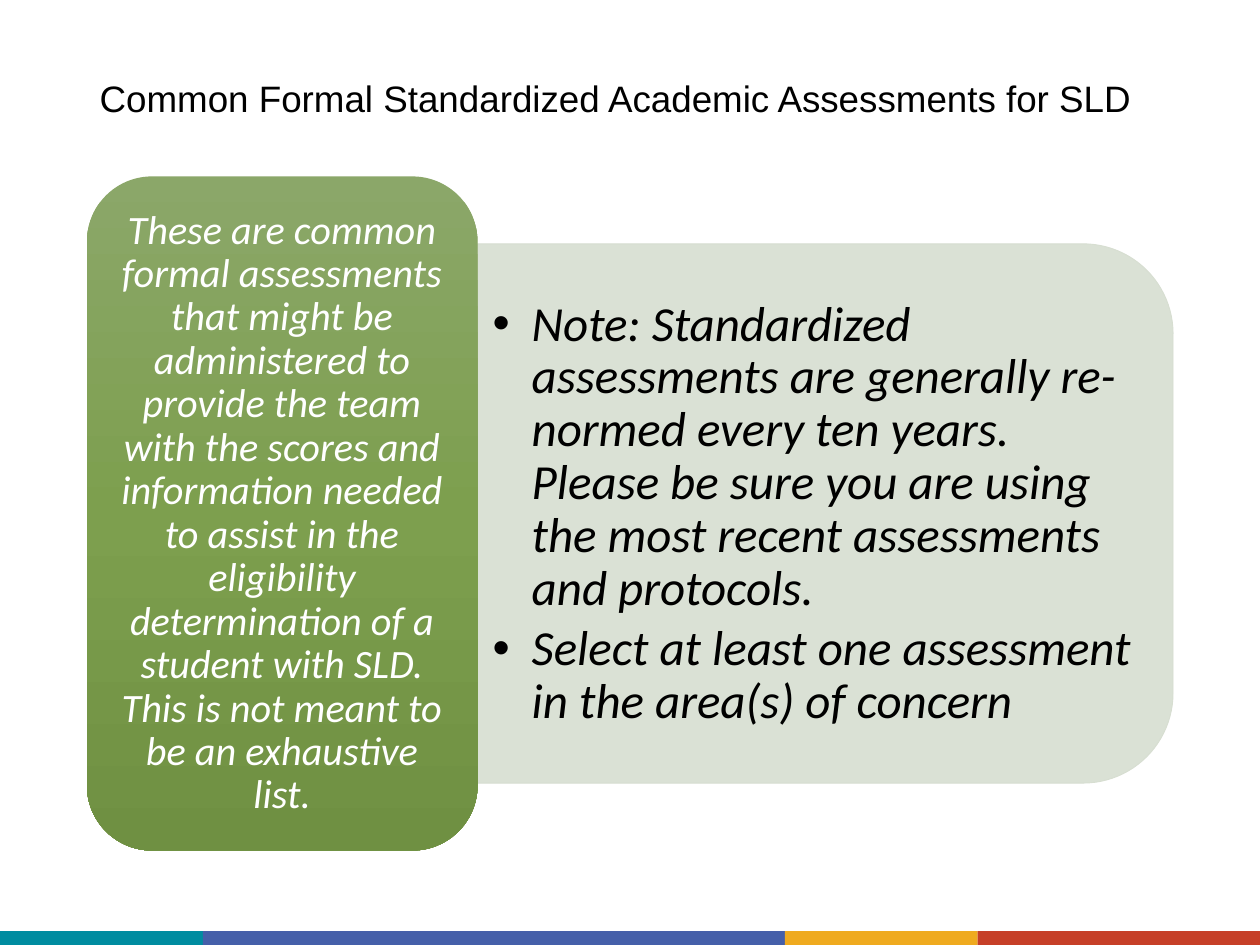
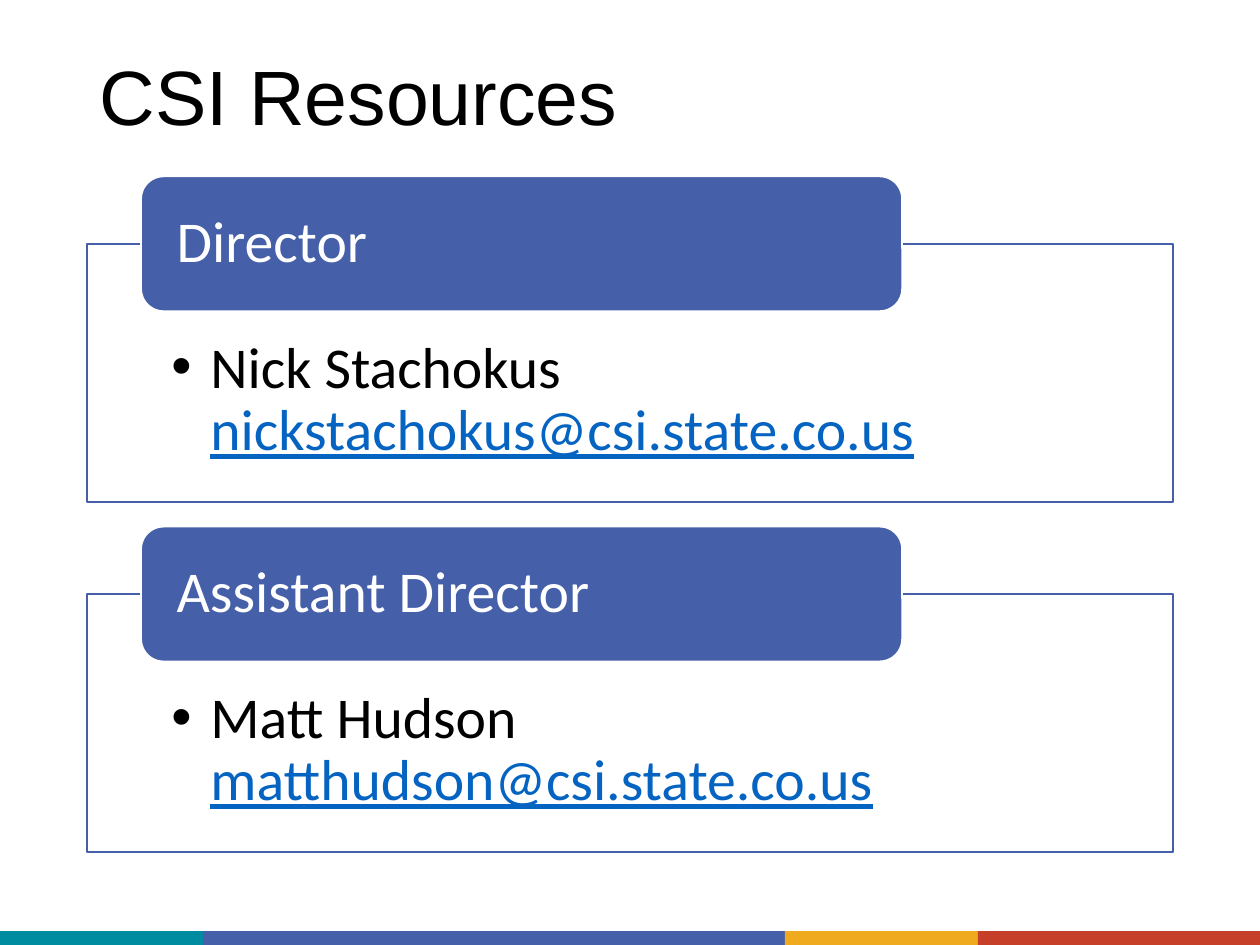
from copy import deepcopy
from dataclasses import dataclass

from lxml.etree import SubElement
from pptx import Presentation
from pptx.dml.color import RGBColor
from pptx.enum.shapes import MSO_SHAPE as Preset
from pptx.enum.text import MSO_ANCHOR as Anchor, MSO_AUTO_SIZE as AutoSize, PP_ALIGN as Align
from pptx.oxml.ns import qn
from pptx.util import Inches, Pt

ASSESSMENT_TITLE = "Common Formal Standardized Academic Assessments for SLD"
ASSESSMENT_INTRO = (
    "These are common formal assessments that might be administered to provide the team "
    "with the scores and information needed to assist in the eligibility determination of "
    "a student with SLD. This is not meant to be an exhaustive list."
)
ASSESSMENT_NOTES = [
    "Note: Standardized assessments are generally re-normed every ten years. Please be sure "
    "you are using the most recent assessments and protocols.",
    "Select at least one assessment in the area(s) of concern",
]
RESOURCES_TITLE = "CSI Resources"
CONTACTS = [
    ("Director", "Nick Stachokus ", "nickstachokus@csi.state.co.us"),
    ("Assistant Director", "Matt Hudson ", "matthudson@csi.state.co.us"),
]


@dataclass(frozen=True)
class Theme:
    title_font: str = "Arial"
    body_font: str = "Calibri"
    black: str = "000000"
    white: str = "FFFFFF"
    teal: str = "008CA0"
    blue: str = "455FA9"
    gold: str = "EFAA1F"
    red: str = "C63F28"
    link: str = "0563C1"
    sage: str = "D7DED1"
    greens: tuple = ("8BA769", "7D9F4E", "6F9042")
    long_title_size: int = 21
    title_size: int = 44
    intro_size: int = 23
    note_size: int = 28
    contact_size: int = 33
    line_spacing: float = 0.9


THEME = Theme()
BANDS = [(1.61, THEME.teal), (4.62, THEME.blue), (1.53, THEME.gold), (2.24, THEME.red)]
BAND_TOP, BAND_HEIGHT = 7.39, 0.11
LEFT, TOP, WIDTH = 0.69, 1.4, 8.62
INTRO_WIDTH, INTRO_HEIGHT = 3.1, 5.35
PANEL_HEIGHT = 4.28
TAB_INDENT, TAB_WIDTH, TAB_HEIGHT = 0.43, 6.04, 1.07
BOX_HEIGHT, CONTACT_STEP = 2.05, 2.78


def rgb(color):
    return RGBColor.from_string(color)


def place(shape, left, top, width, height):
    shape.left, shape.top = Inches(left), Inches(top)
    shape.width, shape.height = Inches(width), Inches(height)


def paint(shape, fill, line=None, line_width=1, alpha=None):
    shape.fill.solid()
    shape.fill.fore_color.rgb = rgb(fill)
    if line:
        shape.line.color.rgb = rgb(line)
        shape.line.width = Pt(line_width)
    else:
        shape.line.fill.background()
    if alpha:
        color = shape.element.spPr.find(qn("a:solidFill")).find(qn("a:srgbClr"))
        SubElement(color, qn("a:alpha"), val=str(alpha * 1000))


def add_preset(slide, preset, left, top, width, height):
    shape = slide.shapes.add_shape(
        preset, Inches(left), Inches(top), Inches(width), Inches(height)
    )
    shape.shadow.inherit = False
    return shape


def setup_frame(shape, insets, anchor):
    frame = shape.text_frame
    frame.word_wrap = True
    frame.auto_size = AutoSize.NONE
    frame.vertical_anchor = anchor
    frame.margin_left, frame.margin_top, frame.margin_right, frame.margin_bottom = map(
        Inches, insets
    )
    return frame


def add_run(paragraph, text, size, color, font=THEME.body_font, italic=False, underline=False):
    run = paragraph.add_run()
    run.text = text
    run.font.name, run.font.size = font, Pt(size)
    run.font.color.rgb = rgb(color)
    run.font.italic, run.font.underline = italic, underline


def format_paragraph(paragraph, align=Align.LEFT, after=0, bullet=False):
    paragraph.alignment = align
    paragraph.line_spacing = THEME.line_spacing
    paragraph.space_before, paragraph.space_after = Pt(0), Pt(after)
    if bullet:
        properties = paragraph._p.get_or_add_pPr()
        properties.set("marL", str(Inches(0.31)))
        properties.set("indent", str(Inches(-0.31)))
        SubElement(properties, qn("a:buFont"), typeface=THEME.title_font)
        SubElement(properties, qn("a:buChar"), char="•")


def add_title(slide, text, size):
    title = slide.shapes.title
    place(title, LEFT, 0.4, WIDTH, 0.8)
    paragraph = setup_frame(title, (0.1, 0.05, 0.1, 0.05), Anchor.MIDDLE).paragraphs[0]
    format_paragraph(paragraph)
    add_run(paragraph, text, size, THEME.black, THEME.title_font)


def add_bands(slide, master):
    left = 0
    for width, color in BANDS:
        band = add_preset(slide, Preset.RECTANGLE, left, BAND_TOP, width, BAND_HEIGHT)
        paint(band, color)
        master.shapes.element.append(band.element)
        left += width


def paint_gradient(shape, colors):
    shape.fill.gradient()
    shape.fill.gradient_angle = 270
    stop_list = shape.element.spPr.find(qn("a:gradFill")).find(qn("a:gsLst"))
    while len(stop_list) < len(colors):
        stop_list.append(deepcopy(stop_list[0]))
    for index, (stop, color) in enumerate(zip(shape.fill.gradient_stops, colors)):
        stop.color.rgb = rgb(color)
        stop.position = index / (len(colors) - 1)
    shape.line.fill.background()


def build_assessments(slide):
    add_title(slide, ASSESSMENT_TITLE, THEME.long_title_size)
    panel_left = LEFT + INTRO_WIDTH
    panel_width = WIDTH - INTRO_WIDTH
    middle = TOP + INTRO_HEIGHT / 2
    panel = add_preset(
        slide,
        Preset.ROUND_2_SAME_RECTANGLE,
        panel_left + (panel_width - PANEL_HEIGHT) / 2,
        middle - panel_width / 2,
        PANEL_HEIGHT,
        panel_width,
    )
    panel.rotation = 90
    paint(panel, THEME.sage, THEME.sage, 0.5, alpha=90)

    notes = slide.placeholders[1]
    place(notes, panel_left, 2.15, 5.31, 3.86)
    slide.shapes.element.append(notes.element)
    frame = setup_frame(notes, (0.12, 0.06, 0.12, 0.06), Anchor.MIDDLE)
    for index, note in enumerate(ASSESSMENT_NOTES):
        paragraph = frame.add_paragraph() if index else frame.paragraphs[0]
        format_paragraph(paragraph, after=THEME.note_size * 0.15, bullet=True)
        add_run(paragraph, note, THEME.note_size, THEME.black, italic=True)

    intro = add_preset(slide, Preset.ROUNDED_RECTANGLE, LEFT, TOP, INTRO_WIDTH, INTRO_HEIGHT)
    paint_gradient(intro, THEME.greens)
    paragraph = setup_frame(intro, (0.1, 0.05, 0.1, 0.05), Anchor.MIDDLE).paragraphs[0]
    format_paragraph(paragraph, Align.CENTER)
    add_run(paragraph, ASSESSMENT_INTRO, THEME.intro_size, THEME.white, italic=True)


def build_resources(slide):
    add_title(slide, RESOURCES_TITLE, THEME.title_size)
    for index, (role, name, email) in enumerate(CONTACTS):
        tab_top = TOP + index * CONTACT_STEP
        box = slide.placeholders[index + 1]
        place(box, LEFT, tab_top + TAB_HEIGHT / 2, WIDTH, BOX_HEIGHT)
        paint(box, THEME.white, THEME.blue, alpha=90)
        paragraph = setup_frame(box, (0.67, 0.75, 0.67, 0.26), Anchor.TOP).paragraphs[0]
        format_paragraph(paragraph, bullet=True)
        add_run(paragraph, name, THEME.contact_size, THEME.black)
        add_run(paragraph, email, THEME.contact_size, THEME.link, underline=True)

        tab = add_preset(
            slide, Preset.ROUNDED_RECTANGLE, LEFT + TAB_INDENT, tab_top, TAB_WIDTH, TAB_HEIGHT
        )
        paint(tab, THEME.blue, THEME.white)
        paragraph = setup_frame(tab, (0.23, 0, 0.23, 0), Anchor.MIDDLE).paragraphs[0]
        format_paragraph(paragraph)
        add_run(paragraph, role, THEME.contact_size, THEME.white)


def main():
    presentation = Presentation()
    presentation.slide_width, presentation.slide_height = Inches(10), Inches(7.5)
    layouts = presentation.slide_layouts
    assessments = presentation.slides.add_slide(layouts.get_by_name("Title and Content"))
    resources = presentation.slides.add_slide(layouts.get_by_name("Two Content"))
    add_bands(assessments, presentation.slide_master)
    build_assessments(assessments)
    build_resources(resources)
    presentation.save("out.pptx")


if __name__ == "__main__":
    main()
